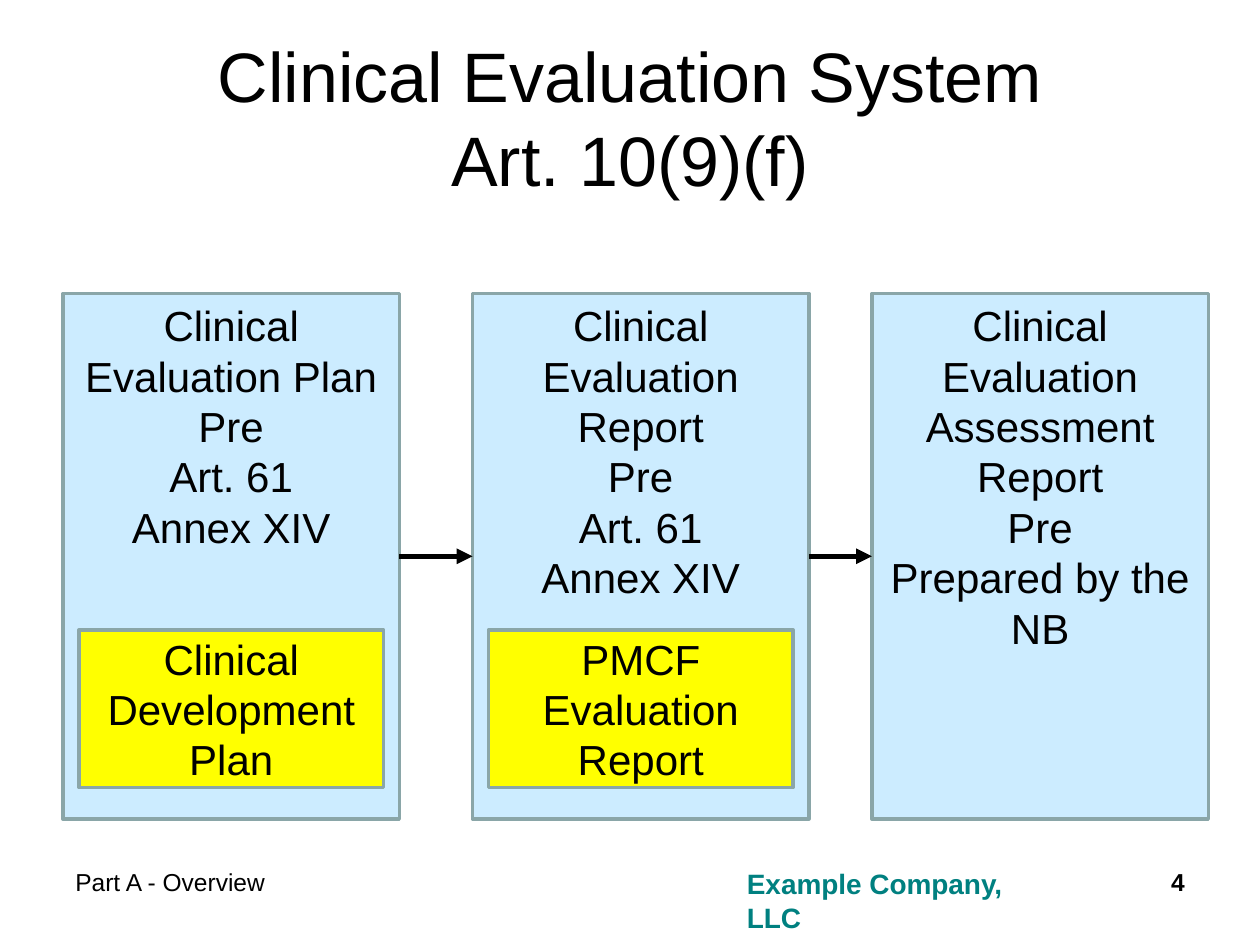
import pptx
import pptx.dml.color
import pptx.enum.shapes
import pptx.enum.text
import pptx.oxml
import pptx.oxml.ns
import pptx.util
from pptx.util import Inches

ALIGN = pptx.enum.text.PP_ALIGN
ANCHOR = pptx.enum.text.MSO_ANCHOR

STAGE_WIDTH, STAGE_HEIGHT, STAGE_TOP = 2.67, 4.17, 2.33
INNER_WIDTH, INNER_HEIGHT, INNER_TOP = 2.42, 1.25, 5

# Left edge, paragraphs, text of the inner box
STAGES = [
    (0.5, ["Clinical Evaluation Plan", "Pre", "Art. 61", "Annex XIV"],
     "Clinical Development Plan"),
    (3.75, ["Clinical Evaluation Report", "Pre", "Art. 61", "Annex XIV"],
     "PMCF Evaluation Report"),
    (6.92, ["Clinical Evaluation Assessment Report", "Pre", "Prepared by the NB"],
     None),
]


def color(value):
    return pptx.dml.color.RGBColor.from_string(value)


def write_text(box, paragraphs, size=24, ink="000000", bold=False,
               align=ALIGN.CENTER, anchor=ANCHOR.TOP):
    frame = box.text_frame
    frame.word_wrap = True
    frame.vertical_anchor = anchor
    for index, text in enumerate(paragraphs):
        para = frame.add_paragraph() if index else frame.paragraphs[0]
        para.alignment = align
        para.text = text  # a vertical tab becomes a line break
        for span in para.runs:
            span.font.name = "Arial"
            span.font.size = pptx.util.Pt(size)
            span.font.bold = bold
            span.font.color.rgb = color(ink)


def add_label(page, left, top, width, height, text, **text_format):
    box = page.shapes.add_textbox(
        Inches(left), Inches(top), Inches(width), Inches(height))
    write_text(box, [text], **text_format)


def add_panel(page, left, top, width, height, fill, paragraphs, **text_format):
    panel = page.shapes.add_shape(
        pptx.enum.shapes.MSO_SHAPE.RECTANGLE,
        Inches(left), Inches(top), Inches(width), Inches(height))
    panel.shadow.inherit = False
    panel.fill.solid()
    panel.fill.fore_color.rgb = color(fill)
    panel.line.color.rgb = color("8AA6A8")
    panel.line.width = pptx.util.Pt(2)
    write_text(panel, paragraphs, **text_format)
    return panel


def add_arrow(page, source, target):
    arrow = page.shapes.add_connector(
        pptx.enum.shapes.MSO_CONNECTOR.STRAIGHT, 0, 0, 0, 0)
    arrow.begin_connect(source, 3)
    arrow.end_connect(target, 1)
    arrow.line.color.rgb = color("000000")
    arrow.line.width = pptx.util.Pt(3)
    # Arrowhead and no shadow
    head = pptx.oxml.parse_xml(
        f'<a:tailEnd {pptx.oxml.ns.nsdecls("a")} type="triangle"/>')
    arrow.line._get_or_add_ln().append(head)
    arrow._element.spPr.append(
        pptx.oxml.parse_xml(f'<a:effectLst {pptx.oxml.ns.nsdecls("a")}/>'))


def main():
    deck = pptx.Presentation()
    deck.slide_width, deck.slide_height = Inches(10), Inches(7.5)
    page = deck.slides.add_slide(deck.slide_layouts[6])

    # Title
    add_label(page, 0.5, 0.3, 9, 1.25, "Clinical Evaluation System\vArt. 10(9)(f)",
              size=40, anchor=ANCHOR.MIDDLE)

    # Stages with their inner boxes
    panels = []
    inset = (STAGE_WIDTH - INNER_WIDTH) / 2
    for left, paragraphs, inner_text in STAGES:
        panels.append(add_panel(page, left, STAGE_TOP, STAGE_WIDTH, STAGE_HEIGHT,
                                "CCECFF", paragraphs))
        if inner_text:
            add_panel(page, left + inset, INNER_TOP, INNER_WIDTH, INNER_HEIGHT,
                      "FFFF00", [inner_text], anchor=ANCHOR.MIDDLE)

    # Arrows from stage to stage
    for source, target in zip(panels, panels[1:]):
        add_arrow(page, source, target)

    # Footer
    add_label(page, 0.5, 6.83, 5.17, 0.52, "Part A - Overview",
              size=14, align=ALIGN.LEFT)
    add_label(page, 5.83, 6.83, 2.34, 0.37, "Example Company, LLC",
              size=16, ink="008080", bold=True, align=ALIGN.LEFT)
    add_label(page, 8.42, 6.83, 1.08, 0.52, "4",
              size=14, bold=True, align=ALIGN.RIGHT)

    deck.save("out.pptx")


if __name__ == "__main__":
    main()
